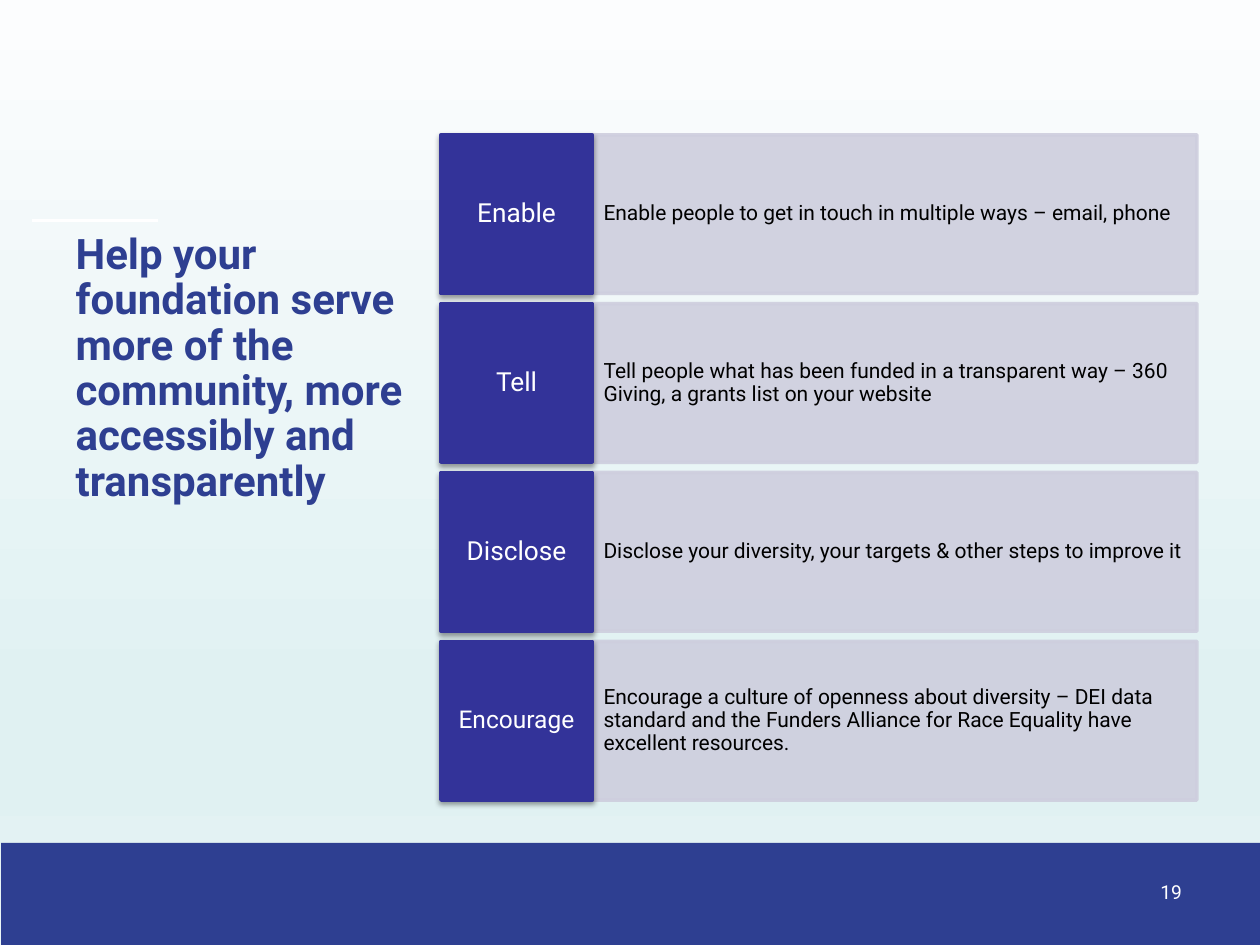
from lxml import etree
from pptx import Presentation
from pptx.dml.color import RGBColor
from pptx.enum import shapes, text
from pptx.oxml import parse_xml
from pptx.oxml.ns import nsdecls, qn
from pptx.util import Inches, Pt

# Content
TITLE = "Help your foundation serve more of the community, more accessibly and transparently"
PAGE_NUMBER = "19"
ACTIONS = [  # label, label size, description
    ("Enable", 15, "Enable people to get in touch in multiple ways – email, phone"),
    ("Tell", 15, "Tell people what has been funded in a transparent way – 360 Giving, "
                 "a grants list on your website"),
    ("Disclose", 15, "Disclose your diversity, your targets & other steps to improve it"),
    ("Encourage", 14, "Encourage a culture of openness about diversity – DEI data standard and "
                      "the Funders Alliance for Race Equality have excellent resources."),
]

# Style
FONT = "Roboto"
COLORS = {"brand": "2E3F91", "label": "333399", "panel": "CECEDE",
          "white": "FFFFFF", "black": "000000"}
BACKGROUND_STOPS = [(0, "FCFDFE"), (74, "E0F1F2"), (83, "E0F1F2"), (100, "EBF6F7")]

# Row grid, in inches
LABEL_LEFT, LABEL_WIDTH, PANEL_WIDTH = 3.5, 1.2, 4.8
ROW_TOP, ROW_HEIGHT, ROW_PITCH = 1.07, 1.26, 1.34


def color(name):
    return RGBColor.from_string(COLORS[name])


def write(shape, content, size, color_name, align, anchor, insets=(0.1, 0.05), bold=False,
          spacing=None):
    frame = shape.text_frame
    frame.text = content
    frame.word_wrap = True
    frame.auto_size = text.MSO_AUTO_SIZE.NONE
    frame.vertical_anchor = anchor
    frame.margin_left = frame.margin_right = Inches(insets[0])
    frame.margin_top = frame.margin_bottom = Inches(insets[1])
    paragraph = frame.paragraphs[0]
    paragraph.alignment = align
    paragraph.space_before = Pt(0)
    paragraph.line_spacing = spacing
    font = paragraph.runs[0].font
    font.name, font.size, font.bold = FONT, Pt(size), bold
    font.color.rgb = color(color_name)


def add_box(slide, left, top, width, height, color_name, outlined=True):
    box = slide.shapes.add_shape(shapes.MSO_SHAPE.RECTANGLE, Inches(left), Inches(top),
                                 Inches(width), Inches(height))
    box.shadow.inherit = False
    box.fill.solid()
    box.fill.fore_color.rgb = color(color_name)
    if outlined:
        box.line.color.rgb = color(color_name)
        box.line.width = Pt(2)
    else:
        box.line.fill.background()
    return box


def make_translucent(box, percent):
    for fill_color in box._element.spPr.iter(qn("a:srgbClr")):
        etree.SubElement(fill_color, qn("a:alpha")).set("val", str(percent * 1000))


def add_drop_shadow(box):
    effects = box._element.spPr.find(qn("a:effectLst"))
    effects.append(parse_xml(
        f'<a:outerShdw {nsdecls("a")} blurRad="{Pt(3.1)}" dist="{Pt(1.6)}" dir="5400000" '
        f'rotWithShape="0"><a:srgbClr val="{COLORS["black"]}"><a:alpha val="38000"/>'
        '</a:srgbClr></a:outerShdw>'))


def set_background(slide):
    fill = slide.background.fill
    fill.gradient()
    fill.gradient_angle = 270  # counter-clockwise: runs from top to bottom
    stops = slide._element.find(".//" + qn("a:gsLst"))
    for stop in list(stops):
        stops.remove(stop)
    for position, value in BACKGROUND_STOPS:
        stop = etree.SubElement(stops, qn("a:gs"), pos=str(position * 1000))
        etree.SubElement(stop, qn("a:srgbClr"), val=value)


def main():
    presentation = Presentation()
    presentation.slide_width, presentation.slide_height = Inches(10), Inches(7.5)
    slide = presentation.slides.add_slide(presentation.slide_layouts[5])
    set_background(slide)
    left, center, right = text.PP_ALIGN.LEFT, text.PP_ALIGN.CENTER, text.PP_ALIGN.RIGHT
    middle = text.MSO_ANCHOR.MIDDLE

    # Accent rule above the title
    rule = slide.shapes.add_connector(shapes.MSO_CONNECTOR.STRAIGHT, Inches(0.25), Inches(1.75),
                                      Inches(1.25), Inches(1.75))
    rule.line.color.rgb = color("white")
    rule.line.width = Pt(1.5)
    etree.SubElement(rule._element.spPr, qn("a:effectLst"))

    # Footer band and page number
    add_box(slide, 0.01, 6.69, 10, 0.81, "brand", outlined=False)
    number = slide.shapes.add_textbox(Inches(6.96), Inches(6.94), Inches(2.52), Inches(0.29))
    write(number, PAGE_NUMBER, 11, "white", right, text.MSO_ANCHOR.TOP)

    # Title
    title = slide.shapes.title
    title.left, title.top = Inches(0.5), Inches(1.07)
    title.width, title.height = Inches(3.29), Inches(2.99)
    write(title, TITLE, 24, "brand", left, text.MSO_ANCHOR.BOTTOM, bold=True, spacing=0.9)

    # Action rows: panel behind, label with shadow in front
    for row, (label_text, label_size, description) in enumerate(ACTIONS):
        top = ROW_TOP + row * ROW_PITCH
        panel = add_box(slide, LABEL_LEFT + LABEL_WIDTH, top, PANEL_WIDTH, ROW_HEIGHT, "panel")
        make_translucent(panel, 90)
        write(panel, description, 12, "black", left, middle, (0.09, 0.32), spacing=0.9)
        label = add_box(slide, LABEL_LEFT, top, LABEL_WIDTH, ROW_HEIGHT, "label")
        add_drop_shadow(label)
        write(label, label_text, label_size, "white", center, middle, (0.06, 0.12), spacing=0.9)

    presentation.save("out.pptx")


if __name__ == "__main__":
    main()
